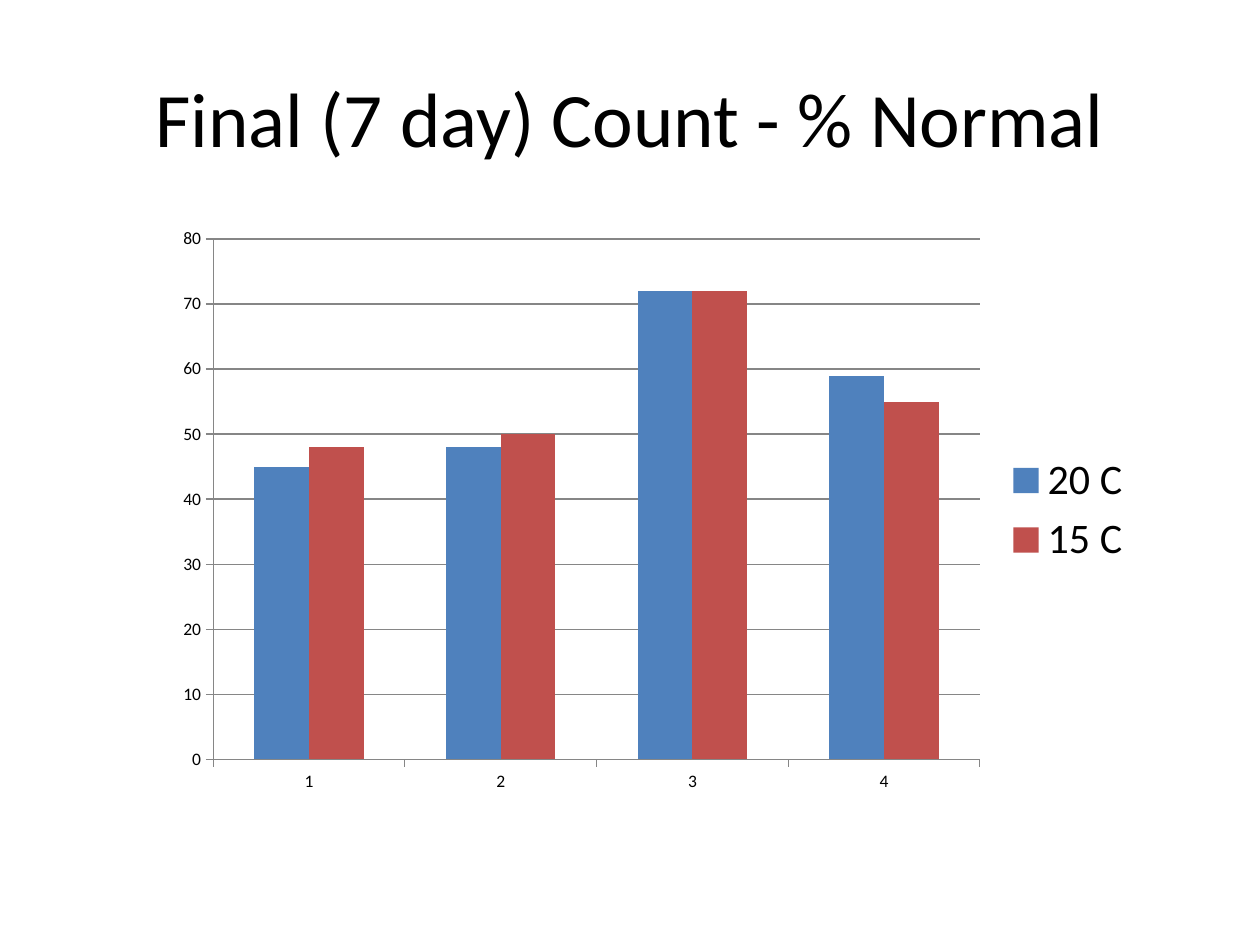
from dataclasses import dataclass

from pptx import Presentation
from pptx.chart.data import CategoryChartData
from pptx.dml.color import RGBColor
from pptx.enum.chart import XL_CHART_TYPE, XL_LEGEND_POSITION, XL_TICK_MARK
from pptx.enum.text import MSO_ANCHOR, PP_ALIGN
from pptx.util import Inches, Pt

TITLE = "Final (7 day) Count - % Normal"
LOTS = ["1", "2", "3", "4"]
NORMAL_PERCENT = {
    "20 C": [45, 48, 72, 59],
    "15 C": [48, 50, 72, 55],
}


@dataclass(frozen=True)
class Theme:
    font: str = "Calibri"
    text: RGBColor = RGBColor(0, 0, 0)
    lines: RGBColor = RGBColor(0x86, 0x86, 0x86)
    bars: tuple = (RGBColor(0x4F, 0x81, 0xBD), RGBColor(0xC0, 0x50, 0x4D))
    title_size: int = 44
    axis_size: int = 10
    legend_size: int = 24


THEME = Theme()
WIDTH, HEIGHT = Inches(10), Inches(7.5)
# Left, top, width and height as shares of the slide
TITLE_AREA = (0.05, 0.04, 0.9, 1 / 6)
CHART_AREA = (0.13, 0.23, 0.78, 0.62)


def place(area):
    return [int(share * side) for share, side in zip(area, (WIDTH, HEIGHT) * 2)]


def style_font(font, size):
    font.name = THEME.font
    font.size = Pt(size)
    font.color.rgb = THEME.text


def style_line(line):
    line.color.rgb = THEME.lines
    line.width = Pt(0.75)


def add_title(slide):
    heading = slide.shapes.add_textbox(*place(TITLE_AREA)).text_frame
    heading.word_wrap = True
    heading.vertical_anchor = MSO_ANCHOR.MIDDLE
    paragraph = heading.paragraphs[0]
    paragraph.alignment = PP_ALIGN.CENTER
    run = paragraph.add_run()
    run.text = TITLE
    style_font(run.font, THEME.title_size)


def add_count_chart(slide):
    counts = CategoryChartData()
    counts.categories = LOTS
    for temperature, percents in NORMAL_PERCENT.items():
        counts.add_series(temperature, percents)
    chart = slide.shapes.add_chart(
        XL_CHART_TYPE.COLUMN_CLUSTERED, *place(CHART_AREA), counts
    ).chart
    chart.has_title = False
    style_font(chart.font, THEME.axis_size)

    chart.has_legend = True
    chart.legend.position = XL_LEGEND_POSITION.RIGHT
    chart.legend.include_in_layout = False
    style_font(chart.legend.font, THEME.legend_size)

    bars = chart.plots[0]
    bars.gap_width = 150
    bars.overlap = 0
    bars.vary_by_categories = False
    for series, color in zip(bars.series, THEME.bars):
        series.format.fill.solid()
        series.format.fill.fore_color.rgb = color

    for axis in (chart.category_axis, chart.value_axis):
        axis.major_tick_mark = XL_TICK_MARK.OUTSIDE
        axis.minor_tick_mark = XL_TICK_MARK.NONE
        style_line(axis.format.line)
    percent_axis = chart.value_axis
    percent_axis.minimum_scale = 0
    percent_axis.maximum_scale = 80
    percent_axis.major_unit = 10
    percent_axis.has_major_gridlines = True
    style_line(percent_axis.major_gridlines.format.line)


def main():
    deck = Presentation()
    deck.slide_width, deck.slide_height = WIDTH, HEIGHT
    slide = deck.slides.add_slide(deck.slide_layouts[6])
    add_title(slide)
    add_count_chart(slide)
    deck.save("out.pptx")


if __name__ == "__main__":
    main()
